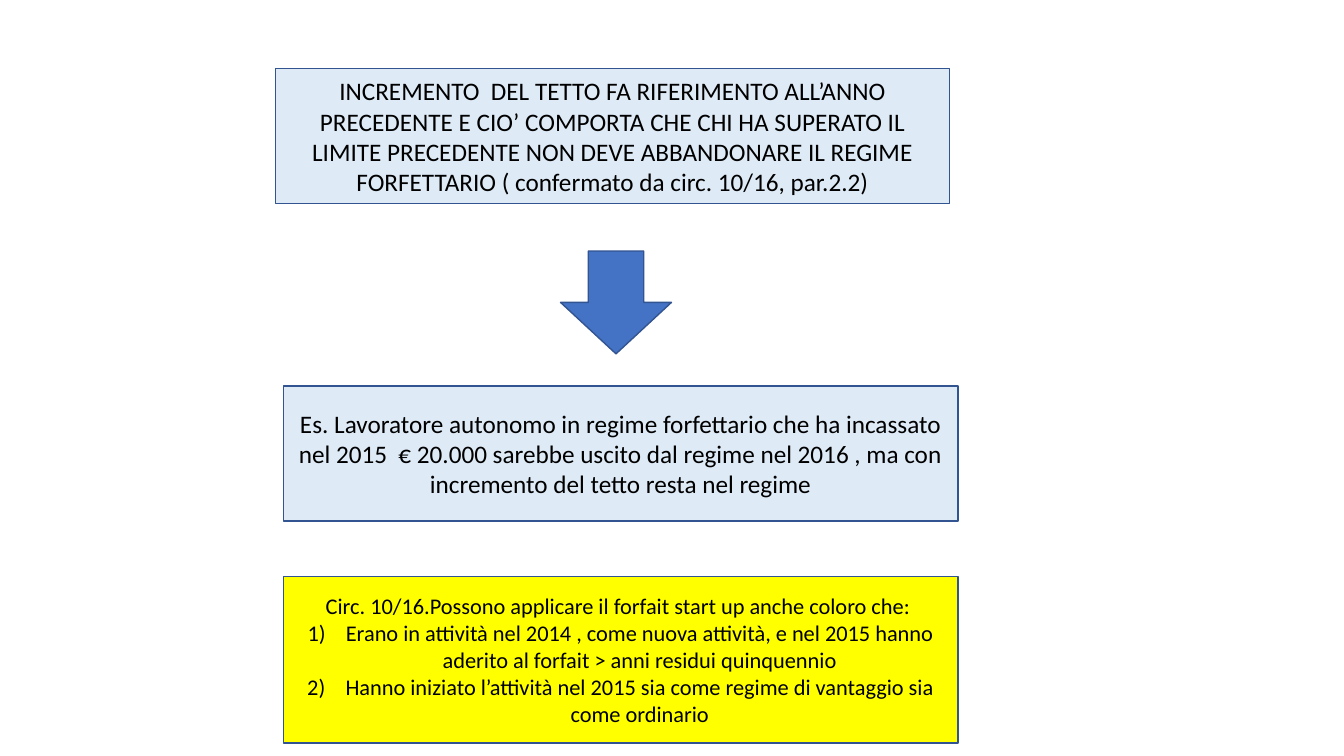
import pptx
import pptx.util
import pptx.dml.color
import pptx.enum.shapes
import pptx.enum.text
import pptx.oxml.ns
import lxml.etree

Inches = pptx.util.Inches
KIND = pptx.enum.shapes.MSO_SHAPE
PALE, BLUE, NAVY, YELLOW, BLACK = "DEEBF7", "4472C4", "325491", "FFFF00", "000000"
WIDTH, HEIGHT = 6.69, 1.34
LEFT = 2.81

RULE = ("INCREMENTO  DEL TETTO FA RIFERIMENTO ALL’ANNO PRECEDENTE E CIO’ COMPORTA "
        "CHE CHI HA SUPERATO IL LIMITE PRECEDENTE NON DEVE ABBANDONARE IL REGIME "
        "FORFETTARIO ( confermato da circ. 10/16, par.2.2)")
CASE = ("Es. Lavoratore autonomo in regime forfettario che ha incassato nel 2015  "
        "€ 20.000 sarebbe uscito dal regime nel 2016 , ma con incremento del tetto "
        "resta nel regime")
INTRO = "Circ. 10/16.Possono applicare il forfait start up anche coloro che: "
ITEMS = [
    "Erano in attività nel 2014 , come nuova attività, e nel 2015 hanno aderito "
    "al forfait > anni residui quinquennio",
    "Hanno iniziato l’attività nel 2015 sia come regime di vantaggio sia come ordinario",
]


def color(code):
    return pptx.dml.color.RGBColor.from_string(code)


def add_shape(slide, kind, box, fill):
    shape = slide.shapes.add_shape(kind, *map(Inches, box))
    shape.shadow.inherit = False
    shape.fill.solid()
    shape.fill.fore_color.rgb = color(fill)
    shape.line.color.rgb = color(NAVY)
    shape.line.width = pptx.util.Pt(1)
    return shape


def number(para):
    """Number a paragraph as 1), 2) with a hanging indent."""
    props = para._p.get_or_add_pPr()
    props.set("marL", str(Inches(0.38)))
    props.set("indent", str(-Inches(0.38)))
    mark = lxml.etree.SubElement(props, pptx.oxml.ns.qn("a:buAutoNum"))
    mark.set("type", "arabicParenR")


def add_panel(slide, box, fill, size, lead, items=()):
    """Draw a box with a lead paragraph and an optional numbered list."""
    frame = add_shape(slide, KIND.RECTANGLE, box, fill).text_frame
    frame.word_wrap = True
    frame.vertical_anchor = pptx.enum.text.MSO_ANCHOR.MIDDLE
    for place, text in enumerate([lead, *items]):
        para = frame.add_paragraph() if place else frame.paragraphs[0]
        para.alignment = pptx.enum.text.PP_ALIGN.CENTER
        if place:
            number(para)
        run = para.add_run()
        run.text = text
        run.font.name = "Calibri"
        run.font.size = pptx.util.Pt(size)
        run.font.color.rgb = color(BLACK)


def main():
    deck = pptx.Presentation()
    deck.slide_width, deck.slide_height = Inches(13.33), Inches(7.5)
    slide = deck.slides.add_slide(deck.slide_layouts.get_by_name("Blank"))
    add_panel(slide, (2.73, 0.68, WIDTH, HEIGHT), PALE, 18, RULE)
    add_shape(slide, KIND.DOWN_ARROW, (5.56, 2.49, 1.1, 1.02), BLUE)
    add_panel(slide, (LEFT, 3.83, WIDTH, HEIGHT), PALE, 18, CASE)
    add_panel(slide, (LEFT, 5.72, WIDTH, 1.65), YELLOW, 16, INTRO, ITEMS)
    deck.save("out.pptx")


if __name__ == "__main__":
    main()
